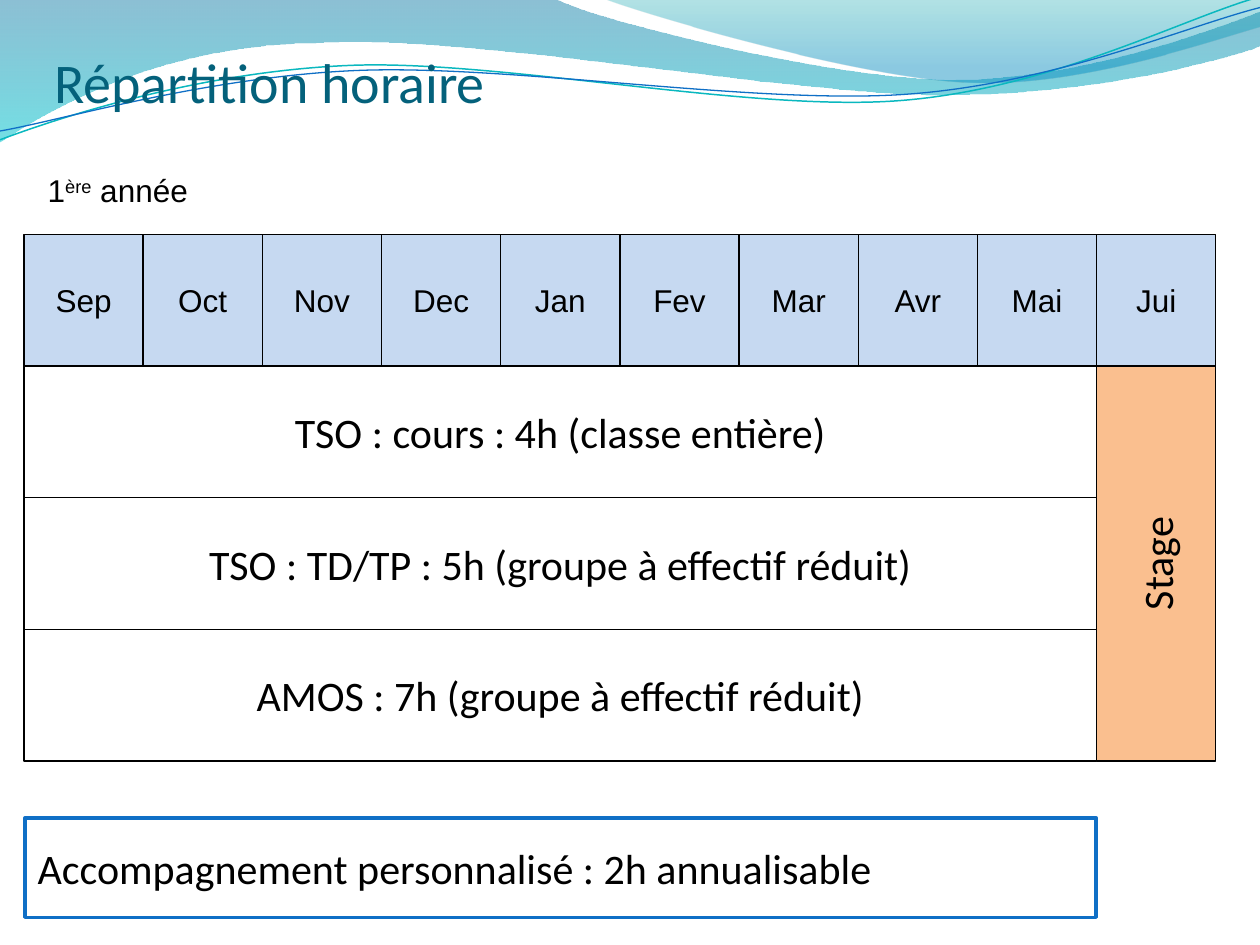
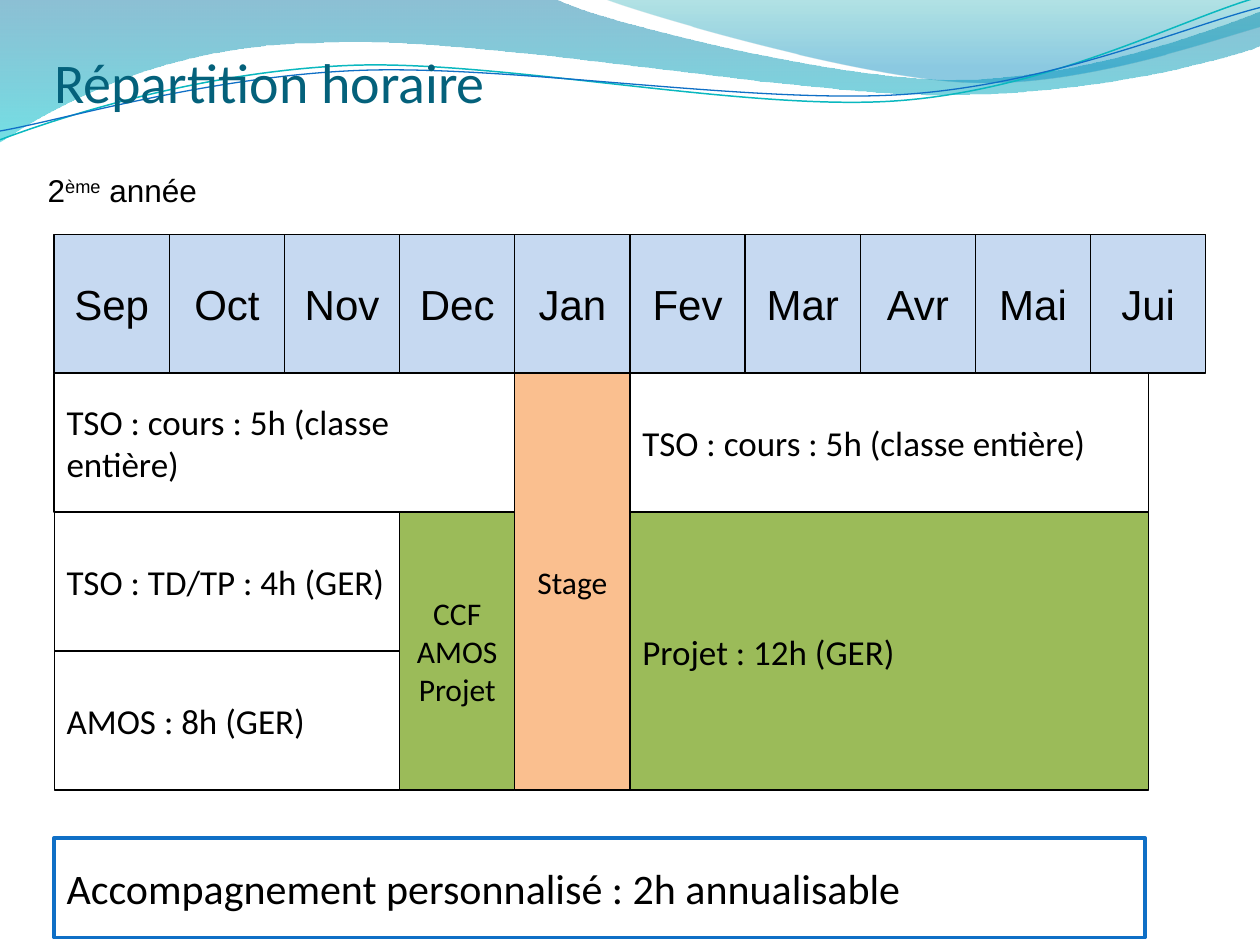
from dataclasses import dataclass

from lxml import etree
from pptx import Presentation
from pptx.dml.color import RGBColor
from pptx.enum.shapes import MSO_SHAPE
from pptx.enum.text import MSO_ANCHOR, PP_ALIGN
from pptx.oxml.ns import qn
from pptx.util import Inches, Pt

RECTANGLE = MSO_SHAPE.RECTANGLE
MIDDLE, BOTTOM = MSO_ANCHOR.MIDDLE, MSO_ANCHOR.BOTTOM
LEFT, CENTER = PP_ALIGN.LEFT, PP_ALIGN.CENTER
TITLE_ONLY = 5


@dataclass(frozen=True)
class Theme:
    heading: str = "04617B"
    ink: str = "000000"
    plain: str = "FFFFFF"
    month: str = "C6D9F1"
    internship: str = "FABF8F"
    project: str = "9BBB59"
    accent: str = "0F6FC6"
    body_font: str = "Calibri"
    label_font: str = "Arial"
    title_size: int = 32
    large: int = 24
    medium: int = 20
    small: int = 18
    thin: float = 0.75
    thick: float = 2


THEME = Theme()

TITLE = "Répartition horaire"
SUPPORT = "Accompagnement personnalisé : 2h annualisable"
MONTHS = ["Sep", "Oct", "Nov", "Dec", "Jan", "Fev", "Mar", "Avr", "Mai", "Jui"]
GRID_ROWS = 4

# Grid is left, top, width, height in inches; support is left, top, width, height.
# Blocks are text, (column, row, columns, rows), fill, size, alignment, vertical.
YEARS = [
    {
        "label": ("1", "ère", " année"),
        "grid": (0.19, 1.86, 9.46, 4.18),
        "month_size": THEME.small,
        "blocks": [
            ("TSO : cours : 4h (classe entière)", (0, 1, 9, 1), THEME.plain, THEME.large, CENTER, False),
            ("TSO : TD/TP : 5h (groupe à effectif réduit)", (0, 2, 9, 1), THEME.plain, THEME.large, CENTER, False),
            ("AMOS : 7h (groupe à effectif réduit)", (0, 3, 9, 1), THEME.plain, THEME.large, CENTER, False),
            ("Stage", (9, 1, 1, 3), THEME.internship, THEME.large, CENTER, True),
        ],
        "support": (0.2, 6.49, 8.5, 0.79),
    },
    {
        "label": ("2", "ème", " année"),
        "grid": (0.43, 1.86, 9.14, 4.41),
        "month_size": THEME.large,
        "blocks": [
            ("TSO : cours : 5h (classe entière)", (0, 1, 4, 1), THEME.plain, THEME.medium, LEFT, False),
            ("TSO : TD/TP : 4h (GER)", (0, 2, 3, 1), THEME.plain, THEME.medium, LEFT, False),
            ("AMOS : 8h (GER)", (0, 3, 3, 1), THEME.plain, THEME.medium, LEFT, False),
            ("CCF AMOS\nProjet", (3, 2, 1, 2), THEME.project, THEME.small, CENTER, False),
            ("Stage", (4, 1, 1, 3), THEME.internship, THEME.small, CENTER, False),
            ("TSO : cours : 5h (classe entière)", (5, 1, 4.5, 1), THEME.plain, THEME.medium, LEFT, False),
            ("Projet : 12h (GER)", (5, 2, 4.5, 2), THEME.project, THEME.medium, LEFT, False),
        ],
        "support": (0.43, 6.65, 8.66, 0.79),
    },
]

# Outlines start at a point; two numbers add a line, six add a Bézier curve.
# Gradient stops are position, colour, opacity in percent.
WAVES = [
    (
        [(0, -0.01), (4.4, -0.01), (4.76, 0.17, 6.64, 0.63, 7.58, 0.63),
         (8.53, 0.63, 9.58, 0.26, 10, 0.09), (10.01, 0.36),
         (9.83, 0.44, 8.7, 0.76, 7.46, 0.75), (6.22, 0.75, 3.82, 0.28, 2.57, 0.34),
         (1.29, 0.35, 0.46, 0.83, -0.01, 1.13), (0, -0.01)],
        [(0, "0074A1", 45), (1, "00C6CF", 55)],
    ),
    (
        [(4.79, -0.01), (5.09, 0.11, 6.82, 0.62, 7.69, 0.65),
         (8.56, 0.69, 9.61, 0.32, 10, 0.21), (10, 0), (4.79, -0.01)],
        [(0, "00A1A9", 30), (0.8, "008BBF", 45)],
    ),
]
STRANDS = [
    (
        [(0, 1.11), (0.48, 0.93, 1.58, 0.57, 2.77, 0.52),
         (3.95, 0.47, 5.93, 0.89, 7.13, 0.8), (8.33, 0.71, 9.38, 0.15, 9.98, -0.02)],
        "0AB8BF", 0.85,
    ),
    (
        [(0, 1.04), (0.47, 0.96, 1.64, 0.61, 2.83, 0.56),
         (4.03, 0.51, 5.97, 0.83, 7.17, 0.75), (8.36, 0.67, 9.41, 0.21, 10, 0.06)],
        THEME.accent, 0.75,
    ),
]


def rgb(value):
    return RGBColor.from_string(value)


def add_outline(page, outline, closed):
    """Build a freeform through the end points, then bend its curved segments."""
    ends = [(Inches(part[-2]), Inches(part[-1])) for part in outline]
    builder = page.shapes.build_freeform(*ends[0])
    builder.add_line_segments(ends[1:], close=closed)
    shape = builder.convert_to_shape()
    shape.shadow.inherit = False
    segments = list(shape.element.iter(qn("a:lnTo")))
    for segment, part in zip(segments, outline[1:]):
        if len(part) == 6:
            segment.addprevious(make_curve(shape, part))
            segment.getparent().remove(segment)
    return shape


def make_curve(shape, part):
    curve = etree.Element(qn("a:cubicBezTo"))
    for x, y in zip(part[::2], part[1::2]):
        point = etree.SubElement(curve, qn("a:pt"))
        point.set("x", str(Inches(x) - shape.left))
        point.set("y", str(Inches(y) - shape.top))
    return curve


def add_wave(page, outline, stops):
    wave = add_outline(page, outline, True)
    wave.line.fill.background()
    wave.fill.gradient()
    wave.fill.gradient_angle = 270
    for stop, (position, colour, _) in zip(wave.fill.gradient_stops, stops):
        stop.position = position
        stop.color.rgb = rgb(colour)
    for colour, (_, _, opacity) in zip(wave.element.iter(qn("a:srgbClr")), stops):
        etree.SubElement(colour, qn("a:alpha")).set("val", str(opacity * 1000))
    return wave


def add_strand(page, outline, colour, width):
    strand = add_outline(page, outline, False)
    strand.fill.background()
    strand.line.color.rgb = rgb(colour)
    strand.line.width = Pt(width)
    return strand


def decorate_master(deck, page):
    """Draw the header waves on a page, then move them behind the master's parts."""
    band = [add_wave(page, *wave) for wave in WAVES]
    band += [add_strand(page, *strand) for strand in STRANDS]
    for position, shape in enumerate(band, start=2):
        deck.slide_master.shapes.element.insert(position, shape.element)


def style(para, font, size, colour=THEME.ink, align=LEFT, after=0):
    para.alignment = align
    para.space_after = Pt(after)
    para.font.name = font
    para.font.size = Pt(size)
    para.font.color.rgb = rgb(colour)


def set_insets(frame, left, top, right, bottom):
    frame.margin_left, frame.margin_top = Inches(left), Inches(top)
    frame.margin_right, frame.margin_bottom = Inches(right), Inches(bottom)


def add_box(page, text, place, fill, size, align=LEFT, font=THEME.body_font,
            line=THEME.ink, width=THEME.thin, after=0):
    box = page.shapes.add_shape(RECTANGLE, *map(Inches, place))
    box.shadow.inherit = False
    box.fill.solid()
    box.fill.fore_color.rgb = rgb(fill)
    box.line.color.rgb = rgb(line)
    box.line.width = Pt(width)
    frame = box.text_frame
    frame.word_wrap = True
    frame.vertical_anchor = MIDDLE
    frame.text = text
    for para in frame.paragraphs:
        style(para, font, size, align=align, after=after)
    return box


def add_title(page):
    title = page.shapes.title
    title.left, title.top, title.width, title.height = map(Inches, (0.43, 0.29, 9, 0.62))
    frame = title.text_frame
    frame.text = TITLE
    frame.vertical_anchor = BOTTOM
    set_insets(frame, 0, 0.05, 0, 0)
    style(frame.paragraphs[0], THEME.body_font, THEME.title_size, THEME.heading)


def add_year_label(page, label):
    box = page.shapes.add_textbox(*map(Inches, (0.28, 1.31, 2.83, 0.4)))
    box.text_frame.word_wrap = True
    para = box.text_frame.paragraphs[0]
    style(para, THEME.label_font, THEME.small)
    spans = [para.add_run() for _ in label]
    for span, text in zip(spans, label):
        span.text = text
    spans[1].font._element.set("baseline", "30000")


def add_schedule(page, year):
    left, top, width, height = year["grid"]
    column_width, row_height = width / len(MONTHS), height / GRID_ROWS

    def cell(column, row, columns=1, rows=1):
        return (left + column * column_width, top + row * row_height,
                columns * column_width, rows * row_height)

    for column, month in enumerate(MONTHS):
        box = add_box(page, month, cell(column, 0), THEME.month, year["month_size"],
                      CENTER, THEME.label_font, after=10)
        set_insets(box.text_frame, 0, 0, 0, 0)
    for text, span, fill, size, align, vertical in year["blocks"]:
        box = add_box(page, text, cell(*span), fill, size, align)
        if vertical:
            box.text_frame._txBody.bodyPr.set("vert", "vert270")
    add_box(page, SUPPORT, year["support"], THEME.plain, THEME.large,
            line=THEME.accent, width=THEME.thick)


def main():
    deck = Presentation()
    deck.slide_width, deck.slide_height = Inches(10), Inches(7.5)
    for number, year in enumerate(YEARS):
        page = deck.slides.add_slide(deck.slide_layouts[TITLE_ONLY])
        if number == 0:
            decorate_master(deck, page)
        add_title(page)
        add_year_label(page, year["label"])
        add_schedule(page, year)
    deck.save("out.pptx")


if __name__ == "__main__":
    main()
